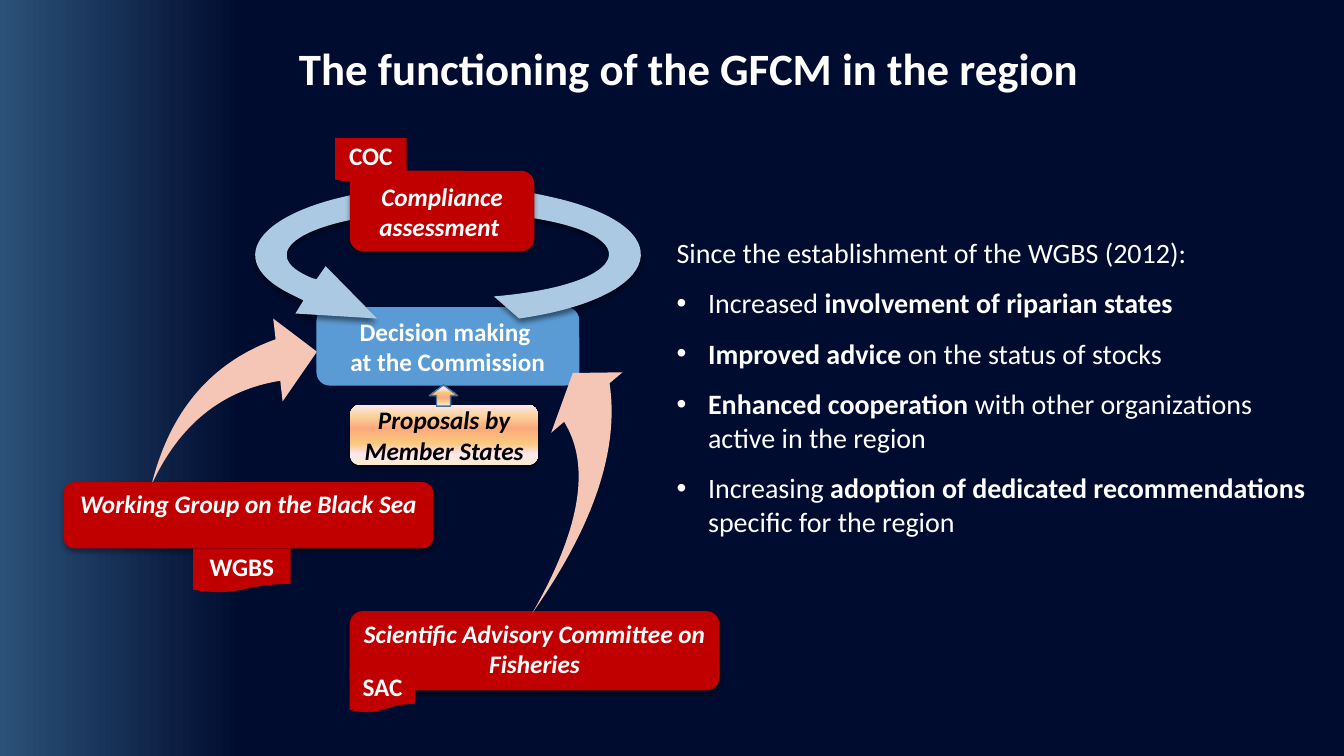
"""Build the slide on how the GFCM works in the region."""
from dataclasses import dataclass
from typing import Optional

from lxml import etree
from pptx import Presentation
from pptx.dml.color import RGBColor
from pptx.dml.fill import FillFormat
from pptx.enum.shapes import MSO_SHAPE
from pptx.enum.text import MSO_ANCHOR, MSO_AUTO_SIZE, PP_ALIGN
from pptx.oxml.ns import qn
from pptx.shapes.autoshape import Shape
from pptx.slide import Slide
from pptx.text.text import TextFrame
from pptx.util import Pt

ROUND, DOC = MSO_SHAPE.ROUNDED_RECTANGLE, MSO_SHAPE.FLOWCHART_DOCUMENT
SWOOSH, DOWN = MSO_SHAPE.SWOOSH_ARROW, MSO_SHAPE.DOWN_ARROW
TOP, MIDDLE = MSO_ANCHOR.TOP, MSO_ANCHOR.MIDDLE
LEFT, CENTER = PP_ALIGN.LEFT, PP_ALIGN.CENTER
GROW, FIXED = MSO_AUTO_SIZE.SHAPE_TO_FIT_TEXT, MSO_AUTO_SIZE.NONE

WHITE, RED, PINK, BLUE, PALE = "FFFFFF", "C00000", "F5C6B6", "5B9BD5", "ABC9E3"
NIGHT = [(82, "000C2F"), (100, "2B5178")]
DAWN = [(0, "FBEAC7"), (18, "FEE7F2"), (36, "FAC77D"),
        (61, "FBA97D"), (82, "FBD49C"), (100, "FEE7F2")]
SOFT, DEEP = (32, 3.5, 2.2), (48, 3.8, 3)

Box = tuple[float, float, float, float]
Point = tuple[float, float]
Runs = list[tuple[str, bool]]


@dataclass
class Part:
    kind: MSO_SHAPE
    box: Box
    fill: Optional[str] = None
    text: str = ""
    color: str = WHITE
    italic: bool = False
    anchor: MSO_ANCHOR = MIDDLE
    inset: Point = (2.2, 2.2)
    grow: bool = False
    shade: Optional[tuple] = None
    turn: float = 0
    flip: bool = False
    line: Optional[str] = None


def panel(box: Box, text: str, **style) -> Part:
    look = {"fill": RED, "italic": True, "shade": SOFT} | style
    return Part(ROUND, box, text=text, **look)


def tag(left: float, top: float, width: float, text: str) -> Part:
    return Part(DOC, (left, top, width, 31.7), RED, text, inset=(1.4, 1.4), grow=True)


BACK = [
    panel((249.8, 436.5, 264.2, 56.7), "Scientific Advisory Committee on Fisheries", anchor=TOP),
    panel((250.3, 289.2, 133.9, 43.1), "Proposals by Member States", fill=None, color="000000"),
    tag(249.8, 477.4, 46.8, "SAC"),
    Part(SWOOSH, (108.3, 227.6, 118.1, 118.6), PINK),
    Part(ROUND, (226.1, 219.4, 187.7, 56), BLUE,
         "Decision making \nat the Commission", inset=(7.2, 3.6)),
]
FRONT = [
    Part(DOWN, (306.7, 275, 20.2, 15.1), turn=180, flip=True, line="43739E"),
    panel((249.9, 122, 131.8, 57.6), "Compliance assessment "),
    tag(239.3, 98.6, 51.1, "COC"),
    panel((45.4, 344.4, 264.2, 47.3), "Working Group on the Black Sea", anchor=TOP),
    tag(137.9, 391.7, 69.8, "WGBS"),
    Part(SWOOSH, (355, 258.5, 96.5, 169.2), PINK, turn=43.3, flip=True),
]
FIELD = (182.2, 132.5, 275, 95)
LOOP = [
    [(269.3, 227.5)], [(232.6, 190.1)], [(226.1, 199.4)], [(223.2, 198.7)],
    [(180, 181.4), (215.3, 155.5), (299.5, 151.2)],
    [(323.3, 150.5), (347, 151.2), (368.6, 154.1)],
    [(464.4, 165.6), (454.3, 203), (352.8, 211.7)], [(370.8, 227.5)],
    [(475.9, 212.4), (488.9, 161.3), (392.4, 140.4)],
    [(361.4, 133.2), (323.3, 131), (288, 133.9)],
    [(192.2, 142.6), (152.6, 182.2), (206.6, 209.5)], [(216.7, 214.6)], [(211, 223.9)],
]
POINTS: list[Runs] = [
    [("Since the establishment of the WGBS (2012):", False)],
    [("Increased ", False), ("involvement of riparian states", True)],
    [("Improved advice ", True), ("on the status of stocks", False)],
    [("Enhanced cooperation ", True), ("with other organizations active in the region", False)],
    [("Increasing ", False), ("adoption of dedicated recommendations ", True),
     ("specific for the region", False)],
]


def rgb(code: str) -> RGBColor:
    return RGBColor.from_string(code)


def node(root: etree._Element, name: str, **attrs: object) -> etree._Element:
    return etree.SubElement(root, qn(f"a:{name}"), {k: str(v) for k, v in attrs.items()})


def blend(fill: FillFormat, root: etree._Element, stops: list, angle: float) -> None:
    fill.gradient()
    fill.gradient_angle = angle
    bands = next(root.iter(qn("a:gsLst")))
    for old in list(bands):
        bands.remove(old)
    for place, code in stops:
        node(node(bands, "gs", pos=place * 1000), "srgbClr", val=code)


def finish(shape: Shape, fill: Optional[str], line: Optional[str], shade: Optional[tuple]) -> None:
    if fill:
        shape.fill.solid()
        shape.fill.fore_color.rgb = rgb(fill)
    else:
        blend(shape.fill, shape.element, DAWN, 90)
    if line:
        shape.line.color.rgb = rgb(line)
        shape.line.width = Pt(1)
    else:
        shape.line.fill.background()
    shape.shadow.inherit = False
    if shade:
        alpha, blur, gap = shade
        glow = node(next(shape.element.iter(qn("a:effectLst"))), "outerShdw",
                    blurRad=Pt(blur), dist=Pt(gap), dir=5400000, rotWithShape=0)
        node(node(glow, "srgbClr", val="000000"), "alpha", val=alpha * 1000)


def write(frame: TextFrame, lines: list[Runs], *, size: float = 18, color: str = WHITE,
          italic: bool = False, align: PP_ALIGN = CENTER, anchor: MSO_ANCHOR = TOP,
          inset: Point = (7.2, 3.6), grow: bool = False, space: float = 0,
          pitch: float = 1, bullet: int = 99) -> None:
    frame.word_wrap, frame.vertical_anchor = True, anchor
    frame.auto_size = GROW if grow else FIXED
    frame.margin_left = frame.margin_right = Pt(inset[0])
    frame.margin_top = frame.margin_bottom = Pt(inset[1])
    for i, runs in enumerate(lines):
        para = frame.add_paragraph() if i else frame.paragraphs[0]
        para.alignment, para.line_spacing = align, pitch
        para.space_before = para.space_after = Pt(space)
        if i >= bullet:
            props = para._p.get_or_add_pPr()
            props.set("marL", str(Pt(22.5)))
            props.set("indent", str(-Pt(22.5)))
            node(props, "buFont", typeface="Arial")
            node(props, "buChar", char="•")
        for text, bold in runs:
            run = para.add_run()
            run.text = text
            font = run.font
            font.name, font.size = "Calibri", Pt(size)
            font.bold, font.italic = bold, italic
            font.color.rgb = rgb(color)


def place(shape: Shape, box: Box) -> None:
    shape.left, shape.top, shape.width, shape.height = map(Pt, box)


def draw(slide: Slide, part: Part) -> None:
    shape = slide.shapes.add_shape(part.kind, *map(Pt, part.box))
    shape.rotation = part.turn
    if part.flip:
        next(shape.element.iter(qn("a:xfrm"))).set("flipH", "1")
    if part.kind == SWOOSH:
        shape.adjustments[0] = shape.adjustments[1] = 0.25
    finish(shape, part.fill, part.line, part.shade)
    if part.text:
        write(shape.text_frame, [[(row, True)] for row in part.text.split("\n")],
              color=part.color, italic=part.italic, anchor=part.anchor,
              inset=part.inset, grow=part.grow)


def ring(slide: Slide) -> None:
    left, top, width, height = FIELD
    ends = [(Pt(x), Pt(y)) for x, y in (leg[-1] for leg in LOOP)]
    pen = slide.shapes.build_freeform(*ends[0])
    pen.add_line_segments(ends[1:], close=True)
    shape = pen.convert_to_shape()
    place(shape, FIELD)
    shape.rotation = 180
    trace = next(shape.element.iter(qn("a:path")))
    trace.set("w", str(Pt(width)))
    trace.set("h", str(Pt(height)))
    for step, leg in zip(list(trace), LOOP):
        if len(leg) == 3:
            step.tag = qn("a:cubicBezTo")
        for old in list(step):
            step.remove(old)
        for x, y in leg:
            node(step, "pt", x=Pt(left + width - x), y=Pt(top + height - y))
    finish(shape, PALE, None, DEEP)


def main() -> None:
    deck = Presentation()
    deck.slide_width, deck.slide_height = Pt(960), Pt(540)
    slide = deck.slides.add_slide(deck.slide_layouts[5])
    blend(slide.background.fill, slide.element, NIGHT, 180)
    place(slide.shapes.title, (48.2, 29.8, 887.8, 66.2))
    write(slide.shapes.title.text_frame, [[("The functioning of the GFCM in the region", True)]],
          size=32, pitch=0.9)
    for part in BACK:
        draw(slide, part)
    ring(slide)
    for part in FRONT:
        draw(slide, part)
    body = slide.shapes.add_textbox(*map(Pt, (476.2, 164.6, 473, 225.4)))
    write(body.text_frame, POINTS, size=20, align=LEFT, grow=True, space=6, bullet=1)
    deck.save("out.pptx")


if __name__ == "__main__":
    main()
